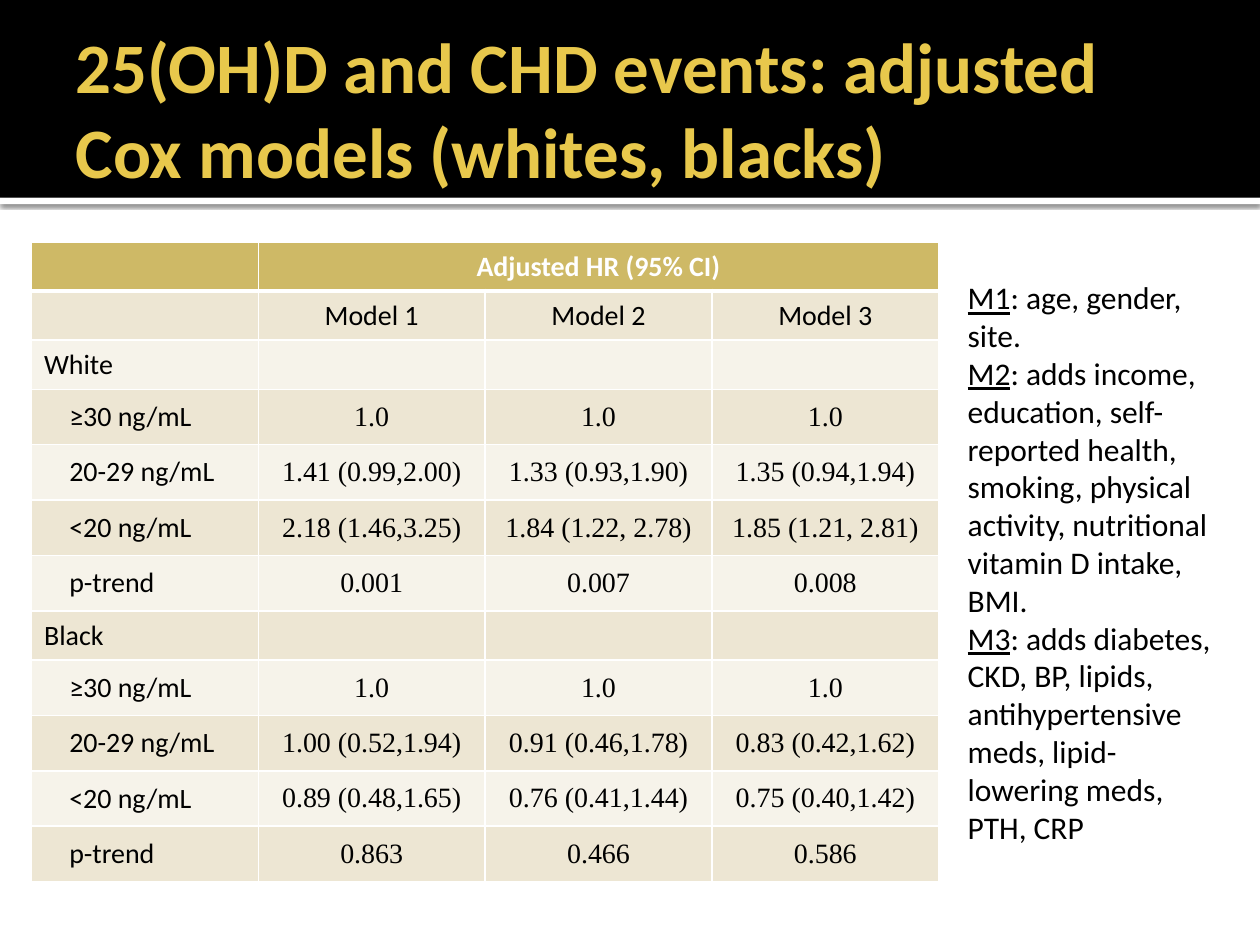
"""Build a slide with a table of adjusted hazard ratios by vitamin D level."""
from dataclasses import dataclass

import lxml.etree
import pptx
import pptx.dml.color
import pptx.enum.shapes
import pptx.enum.text
import pptx.oxml
import pptx.oxml.ns
import pptx.util

UNIT = pptx.util.Inches(0.25)
HUES = {"black": "000000", "white": "FFFFFF", "gold": "E8C84C",
        "head": "CEB966", "dark": "EDE6D3", "light": "F6F3EA"}
SANS, SERIF = "Calibri", "Times New Roman"
LEFT = pptx.enum.text.PP_ALIGN.LEFT
MID = pptx.enum.text.PP_ALIGN.CENTER
CENTER = pptx.enum.text.MSO_ANCHOR.MIDDLE
LEVELS = ("≥30 ng/mL", "20-29 ng/mL", "<20 ng/mL", "p-trend")


@dataclass(frozen=True)
class Box:
    """A place on the grid of 40 columns and 30 rows."""
    col: float
    row: float
    cols: float
    rows: float

    def emu(self) -> list[int]:
        """Return left, top, width and height."""
        return [round(n * UNIT) for n in (self.col, self.row, self.cols, self.rows)]


@dataclass(frozen=True)
class Group:
    """The ratios of one race, level by level."""
    name: str
    ratios: tuple


@dataclass(frozen=True)
class Note:
    """What a model adjusts for."""
    model: str
    terms: str


GROUPS = (
    Group("White", (("1.0", "1.0", "1.0"),
                    ("1.41 (0.99,2.00)", "1.33 (0.93,1.90)", "1.35 (0.94,1.94)"),
                    ("2.18 (1.46,3.25)", "1.84 (1.22, 2.78)", "1.85 (1.21, 2.81)"),
                    ("0.001", "0.007", "0.008"))),
    Group("Black", (("1.0", "1.0", "1.0"),
                    ("1.00 (0.52,1.94)", "0.91 (0.46,1.78)", "0.83 (0.42,1.62)"),
                    ("0.89 (0.48,1.65)", "0.76 (0.41,1.44)", "0.75 (0.40,1.42)"),
                    ("0.863", "0.466", "0.586"))),
)
NOTES = (
    Note("M1", ": age, gender, site."),
    Note("M2", ": adds income, education, self-reported health, smoking, "
               "physical activity, nutritional vitamin D intake, BMI."),
    Note("M3", ": adds diabetes, CKD, BP, lipids, antihypertensive meds, "
               "lipid-lowering meds, PTH, CRP"),
)


def tint(name: str) -> pptx.dml.color.RGBColor:
    """Look up a colour."""
    return pptx.dml.color.RGBColor.from_string(HUES[name])


def place(shape, box: Box) -> None:
    """Move a shape to its box."""
    shape.left, shape.top, shape.width, shape.height = box.emu()


def write(para, text: str, size: float, hue: str = "black", face: str = SANS,
          bold: bool = False, line: bool = False) -> None:
    """Add one run to a paragraph."""
    run = para.add_run()
    run.text = text
    font = run.font
    font.size, font.name, font.bold, font.underline = pptx.util.Pt(size), face, bold, line
    font.color.rgb = tint(hue)


def inset(frame, left: float, top: float, right: float, foot: float) -> None:
    """Set the margins of a frame or cell in inches."""
    frame.margin_left, frame.margin_top, frame.margin_right, frame.margin_bottom = (
        pptx.util.Inches(n) for n in (left, top, right, foot))


def band(slide, box: Box, hue: str):
    """Draw a plain band behind the title."""
    shape = slide.shapes.add_shape(pptx.enum.shapes.MSO_SHAPE.RECTANGLE, *box.emu())
    shape.shadow.inherit = False
    shape.fill.solid()
    shape.fill.fore_color.rgb = tint(hue)
    shape.line.fill.background()
    slide.shapes.title.element.addprevious(shape.element)
    return shape


def shade(shape) -> None:
    """Drop a soft shadow below a shape."""
    space = pptx.oxml.ns.nsdecls("a")
    list_el = shape.element.spPr.find(pptx.oxml.ns.qn("a:effectLst"))
    list_el.append(pptx.oxml.parse_xml(
        f'<a:outerShdw {space} blurRad="{pptx.util.Pt(2.5)}" dist="{pptx.util.Pt(0.8)}" '
        f'dir="5400000" rotWithShape="0"><a:srgbClr val="{HUES["black"]}">'
        '<a:alpha val="60000"/></a:srgbClr></a:outerShdw>'))


def edge(cell, top: float, foot: float) -> None:
    """Give a cell white borders, with widths in points."""
    props = cell._tc.get_or_add_tcPr()
    for side, width in {"L": 1, "R": 1, "T": top, "B": foot}.items():
        line = lxml.etree.SubElement(props, pptx.oxml.ns.qn(f"a:ln{side}"),
                                     w=str(pptx.util.Pt(width)))
        fill = lxml.etree.SubElement(line, pptx.oxml.ns.qn("a:solidFill"))
        lxml.etree.SubElement(fill, pptx.oxml.ns.qn("a:srgbClr"), val=HUES["white"])


def chart_rows() -> list[tuple]:
    """List the rows of the table."""
    rows = [("", "Adjusted HR (95% CI)", "", ""), ("", "Model 1", "Model 2", "Model 3")]
    for group in GROUPS:
        rows.append((group.name, "", "", ""))
        rows += [(name, *vals) for name, vals in zip(LEVELS, group.ratios)]
    return rows


def grid(slide, box: Box):
    """Draw the table of ratios."""
    rows = chart_rows()
    frame = slide.shapes.add_table(len(rows), 4, *box.emu())
    table = frame.table
    for col in table.columns:
        col.width = round(box.cols / 4 * UNIT)
    for r, texts in enumerate(rows):
        level = texts[0] in LEVELS
        table.rows[r].height = round((1.76 if level else 1.56) * UNIT)
        hue = "head" if r == 0 else "dark" if r % 2 else "light"
        for c, text in enumerate(texts):
            cell = table.cell(r, c)
            edge(cell, 3 if r == 1 else 1, 3 if r == 0 else 1)
            cell.fill.solid()
            cell.fill.fore_color.rgb = tint(hue)
            cell.vertical_anchor = CENTER
            value = level and c > 0
            if value or not text:
                inset(cell, 0.07, 0, 0.07, 0)
            elif level:
                inset(cell, 0.3, 0.05, 0.1, 0.05)
            if text:
                para = cell.text_frame.paragraphs[0]
                para.alignment = MID if c else LEFT
                write(para, text, 16, "black" if r else "white",
                      SERIF if value else SANS, r == 0)
    table.cell(0, 1).merge(table.cell(0, 3))
    return frame


def head(slide, box: Box, text: str) -> None:
    """Fill the title."""
    title = slide.shapes.title
    place(title, box)
    frame = title.text_frame
    frame.auto_size = pptx.enum.text.MSO_AUTO_SIZE.NONE
    frame.vertical_anchor = CENTER
    inset(frame, 0.1, 0.05, 0.05, 0.05)
    frame.paragraphs[0].alignment = LEFT
    write(frame.paragraphs[0], text, 40.5, "gold", bold=True)


def legend(body, box: Box) -> None:
    """Fill the body with the model notes."""
    place(body, box)
    frame = body.text_frame
    frame.auto_size = pptx.enum.text.MSO_AUTO_SIZE.NONE
    frame.vertical_anchor = CENTER
    for i, note in enumerate(NOTES):
        para = frame.add_paragraph() if i else frame.paragraphs[0]
        para.space_before = pptx.util.Pt(0)
        props = para._p.get_or_add_pPr()
        props.set("marL", "0")
        props.set("indent", "0")
        lxml.etree.SubElement(props, pptx.oxml.ns.qn("a:buNone"))
        write(para, note.model, 18, line=True)
        write(para, note.terms, 18)


def main() -> None:
    """Build and save the slide."""
    deck = pptx.Presentation()
    deck.slide_width, deck.slide_height = 40 * UNIT, 30 * UNIT
    slide = deck.slides.add_slide(deck.slide_layouts[1])
    body = slide.placeholders[1]
    shade(band(slide, Box(0, 6.28, 40, 0.2), "white"))
    band(slide, Box(0, 0, 40, 6.28), "black")
    head(slide, Box(2, 0.68, 36, 5.48),
         "25(OH)D and CHD events: adjusted Cox models (whites, blacks)")
    table = grid(slide, Box(1, 7.68, 28.8, 20.32))
    body.element.addprevious(table.element)
    legend(body, Box(30.32, 7.68, 9, 20.32))
    deck.save("out.pptx")


if __name__ == "__main__":
    main()
